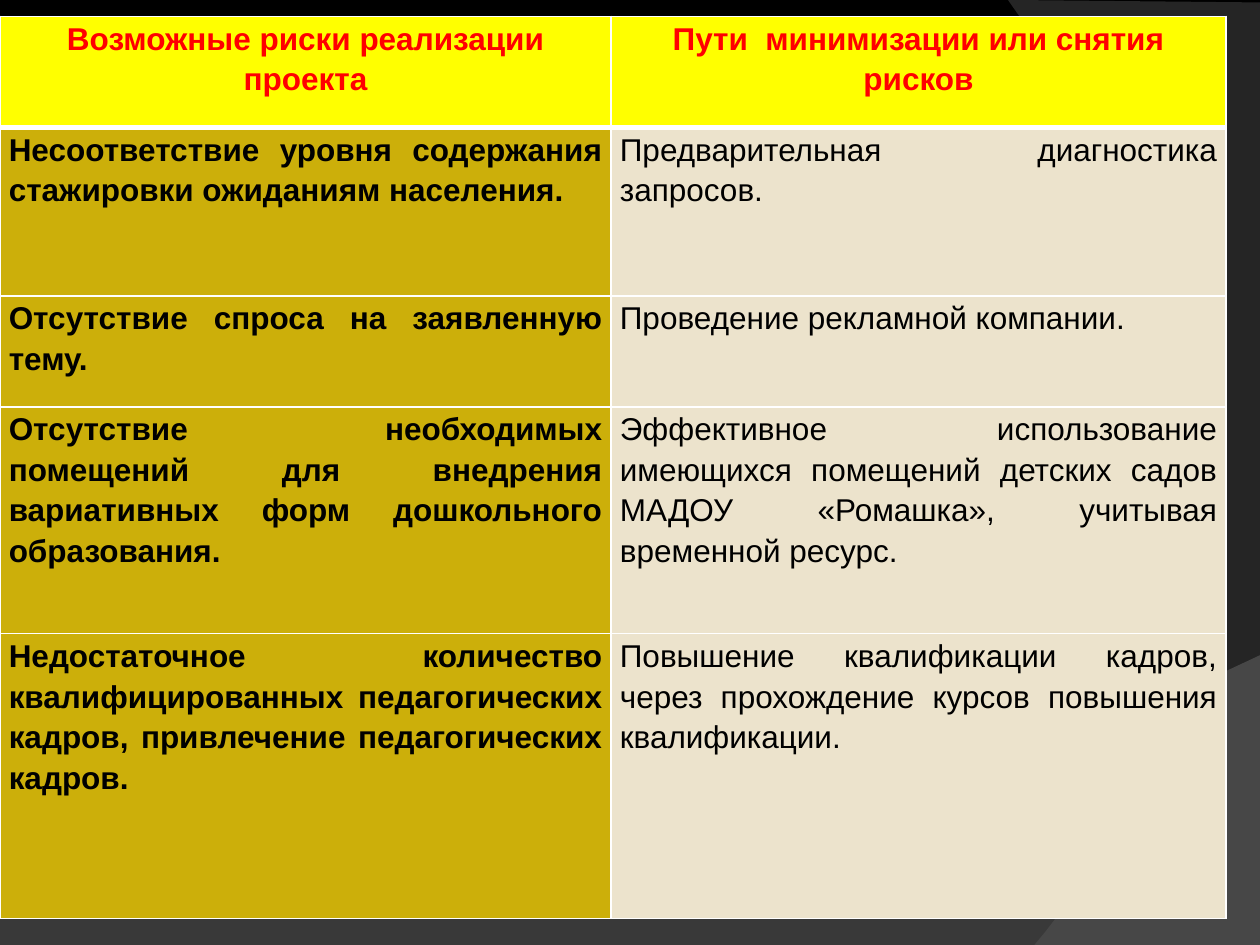
from typing import NamedTuple

from lxml import etree
from pptx import Presentation
from pptx import util as u
from pptx.dml.color import RGBColor
from pptx.enum import text
from pptx.oxml import ns

Point = tuple[float, float]


class Wave(NamedTuple):
    lead: list[Point]
    curve: list[Point]
    tint: str
    alpha: int


class Look(NamedTuple):
    fill: str
    ink: str
    bold: bool
    align: text.PP_ALIGN


HEAD = Look("FFFF00", "FF0000", True, text.PP_ALIGN.CENTER)
RISK = Look("CCAF0A", "000000", True, text.PP_ALIGN.JUSTIFY)
WAY = Look("ECE3CC", "000000", False, text.PP_ALIGN.JUSTIFY)

WAVES = [
    Wave([(0, 7.05), (0, 7.51), (10, 7.51)],
         [(10, 5.2), (5.59, 7.29), (3.91, 7.19), (0, 7.05)], "7F7F7F", 45),
    Wave([(10, 0.02), (10, 7.5)],
         [(8.21, 7.5), (9.35, 6.19), (10.18, 3), (8, 0)], "5E5E5E", 40),
]

COLS = [4.85, 4.88]
ROWS = [
    (0.88, "Возможные риски реализации проекта",
     "Пути  минимизации или снятия рисков"),
    (1.34, "Несоответствие уровня содержания стажировки ожиданиям населения.",
     "Предварительная диагностика запросов."),
    (0.88, "Отсутствие спроса на заявленную тему.",
     "Проведение рекламной компании."),
    (1.8, "Отсутствие необходимых помещений для внедрения вариативных форм "
     "дошкольного образования.",
     "Эффективное использование имеющихся помещений детских садов "
     "МАДОУ «Ромашка», учитывая временной ресурс."),
    (2.26, "Недостаточное количество квалифицированных педагогических кадров, "
     "привлечение педагогических кадров.",
     "Повышение квалификации кадров, через прохождение курсов повышения "
     "квалификации."),
]


def paint(fill, tint: str) -> None:
    fill.solid()
    fill.fore_color.rgb = RGBColor.from_string(tint)


def bend(pts: list[Point], steps: int = 40) -> list[Point]:
    out = []
    for i in range(steps + 1):
        t = i / steps
        mix = ((1 - t) ** 3, 3 * t * (1 - t) ** 2, 3 * t * t * (1 - t), t ** 3)
        out.append((sum(m * p[0] for m, p in zip(mix, pts)),
                    sum(m * p[1] for m, p in zip(mix, pts))))
    return out


def draw_wave(slide, wave: Wave) -> None:
    pts = [(u.Inches(x), u.Inches(y)) for x, y in wave.lead + bend(wave.curve)]
    pen = slide.shapes.build_freeform(*pts[0])
    pen.add_line_segments(pts[1:], close=True)
    shape = pen.convert_to_shape()
    shape.shadow.inherit = False
    shape.line.fill.background()
    paint(shape.fill, wave.tint)
    tone = shape.fill._xPr.find(".//" + ns.qn("a:srgbClr"))
    etree.SubElement(tone, ns.qn("a:alpha"), val=str(wave.alpha * 1000))


def add_edge(cell, side: str, width: float) -> None:
    props = cell._tc.get_or_add_tcPr()
    line = etree.SubElement(props, ns.qn("a:ln" + side), w=str(u.Pt(width)))
    solid = etree.SubElement(line, ns.qn("a:solidFill"))
    etree.SubElement(solid, ns.qn("a:srgbClr"), val="FFFFFF")


def fill_cell(cell, words: str, look: Look, top: float, base: float) -> None:
    for side, width in zip("LRTB", (1, 1, top, base)):
        add_edge(cell, side, width)
    paint(cell.fill, look.fill)
    cell.margin_left = cell.margin_right = u.Inches(0.07)
    cell.margin_top = cell.margin_bottom = 0
    cell.text_frame.text = words
    para = cell.text_frame.paragraphs[0]
    para.alignment = look.align
    para.line_spacing = 1.15
    font = para.runs[0].font
    font.name, font.size, font.bold = "Arial", u.Pt(18), look.bold
    font.color.rgb = RGBColor.from_string(look.ink)


def draw_table(slide) -> None:
    high = sum(row[0] for row in ROWS)
    table = slide.shapes.add_table(
        len(ROWS), len(COLS), 0, u.Inches(0.13),
        u.Inches(sum(COLS)), u.Inches(high)).table
    for col, wide in zip(table.columns, COLS):
        col.width = u.Inches(wide)
    for r, (tall, *cells) in enumerate(ROWS):
        table.rows[r].height = u.Inches(tall)
        looks = (RISK, WAY) if r else (HEAD, HEAD)
        top, base = 3 if r == 1 else 1, 1 if r else 3
        for c, (words, look) in enumerate(zip(cells, looks)):
            fill_cell(table.cell(r, c), words, look, top, base)


def main() -> None:
    deck = Presentation()
    deck.slide_width, deck.slide_height = u.Inches(10), u.Inches(7.5)
    slide = deck.slides.add_slide(deck.slide_layouts[6])
    paint(slide.background.fill, "000000")
    for wave in WAVES:
        draw_wave(slide, wave)
    draw_table(slide)
    deck.save("out.pptx")


if __name__ == "__main__":
    main()
